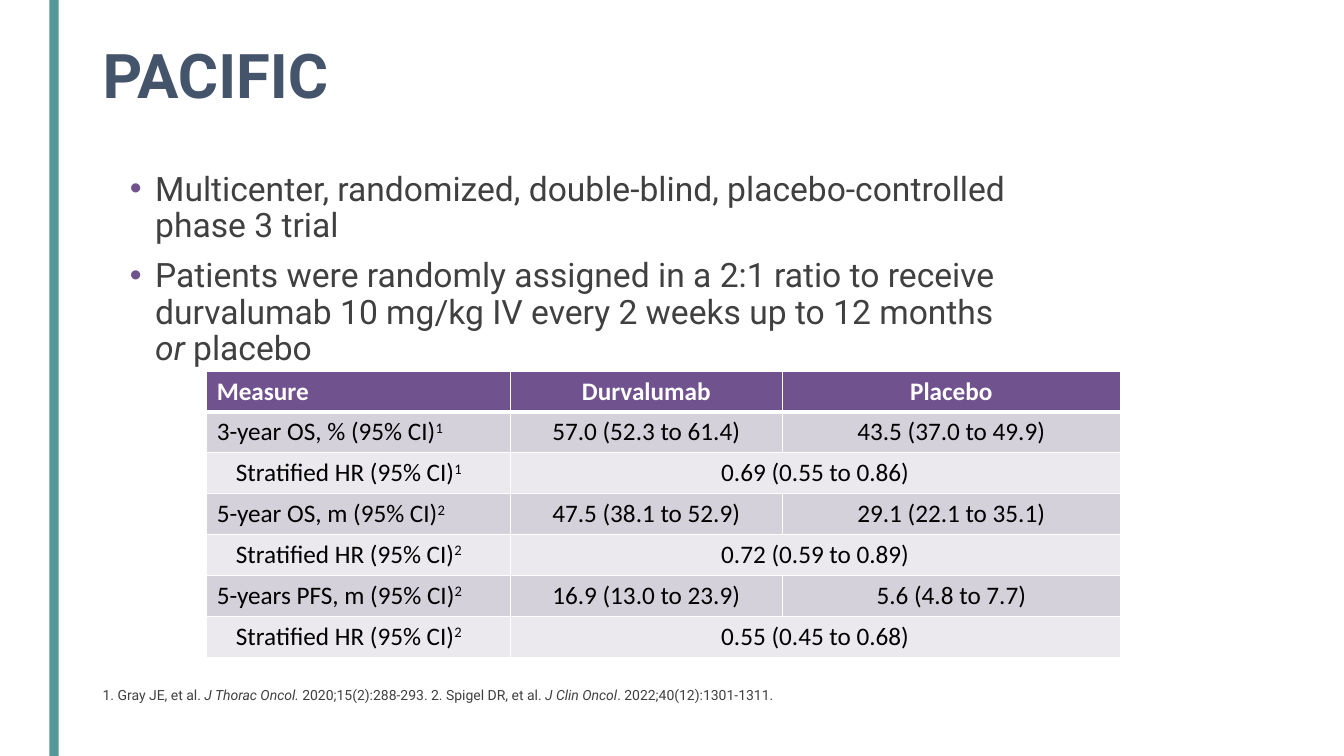
"""Build the PACIFIC trial slide with its outcome table."""
from dataclasses import dataclass
from typing import Any

import lxml.etree
import pptx
import pptx.dml.color
import pptx.enum.shapes
import pptx.enum.text
import pptx.oxml.ns
import pptx.util

ALIGN = pptx.enum.text.PP_ALIGN
WIDE = pptx.util.Inches(13.33)
HIGH = pptx.util.Inches(7.5)


@dataclass(frozen=True)
class Theme:
    head: str = "Roboto"
    cell: str = "Calibri"
    teal: str = "549897"
    slate: str = "44546A"
    gray: str = "404040"
    plum: str = "70528F"
    dark: str = "D5D1DB"
    light: str = "EBE9EE"
    white: str = "FFFFFF"
    black: str = "000000"
    title: int = 44
    body: int = 24
    grid: int = 18
    note: int = 10


@dataclass(frozen=True)
class Box:
    """Left, top, width and height in percent of the slide."""
    left: float
    top: float
    width: float
    height: float

    def place(self) -> tuple[int, int, int, int]:
        return (across(self.left), down(self.top),
                across(self.width), down(self.height))


@dataclass(frozen=True)
class Style:
    font: str
    size: int
    color: str
    bold: bool = False


@dataclass(frozen=True)
class Run:
    text: str
    italic: bool = False
    raised: bool = False


@dataclass(frozen=True)
class Row:
    label: str
    values: tuple[str, ...]
    cite: str = ""


THEME = Theme()
BAR = Box(3.68, 0, 0.68, 100)
TITLE = Box(6.9, 5.33, 86.27, 19.33)
NOTE = Box(6.9, 90.13, 75.54, 8)
BODY = Box(8.93, 22.13, 67.97, 55.87)
TABLE = Box(15.38, 49.07, 67.97, 37.87)
COLS = (22.58, 20.26, 25.13)

ROWS = (
    Row("Measure", ("Durvalumab", "Placebo")),
    Row("3-year OS, % (95% CI)",
        ("57.0 (52.3 to 61.4)", "43.5 (37.0 to 49.9)"), "1"),
    Row("Stratified HR (95% CI)", ("0.69 (0.55 to 0.86)",), "1"),
    Row("5-year OS, m (95% CI)",
        ("47.5 (38.1 to 52.9)", "29.1 (22.1 to 35.1)"), "2"),
    Row("Stratified HR (95% CI)", ("0.72 (0.59 to 0.89)",), "2"),
    Row("5-years PFS, m (95% CI)",
        ("16.9 (13.0 to 23.9)", "5.6 (4.8 to 7.7)"), "2"),
    Row("Stratified HR (95% CI)", ("0.55 (0.45 to 0.68)",), "2"),
)
POINTS = (
    (Run("Multicenter, randomized, double-blind, "
         "placebo-controlled phase 3 trial"),),
    (Run("Patients were randomly assigned in a 2:1 ratio to receive "
         "durvalumab 10 mg/kg IV every 2 weeks up to 12 months "),
     Run("or", italic=True), Run(" placebo")),
)
CITES = (
    Run("1. Gray JE, et al. "), Run("J Thorac Oncol. ", italic=True),
    Run("2020;15(2):288-293. 2. Spigel DR, et al. "),
    Run("J Clin Oncol", italic=True), Run(". 2022;40(12):1301-1311."),
)


def across(share: float) -> int:
    return round(WIDE * share / 100)


def down(share: float) -> int:
    return round(HIGH * share / 100)


def tint(code: str) -> pptx.dml.color.RGBColor:
    return pptx.dml.color.RGBColor.from_string(code)


def child(node: Any, tag: str, **attrs: str) -> Any:
    return lxml.etree.SubElement(node, pptx.oxml.ns.qn(tag), attrs)


def write(para: Any, runs: tuple[Run, ...], style: Style) -> None:
    for item in runs:
        run = para.add_run()
        run.text = item.text
        font = run.font
        font.name, font.size = style.font, pptx.util.Pt(style.size)
        font.bold, font.italic = style.bold, item.italic
        font.color.rgb = tint(style.color)
        if item.raised:
            run._r.get_or_add_rPr().set("baseline", "30000")


def add_text(slide: Any, box: Box) -> Any:
    frame = slide.shapes.add_textbox(*box.place()).text_frame
    frame.word_wrap = True
    return frame


def add_bar(slide: Any) -> None:
    bar = slide.shapes.add_shape(
        pptx.enum.shapes.MSO_SHAPE.RECTANGLE, *BAR.place())
    bar.shadow.inherit = False
    bar.fill.solid()
    bar.fill.fore_color.rgb = tint(THEME.teal)
    bar.line.fill.background()


def add_points(slide: Any) -> None:
    frame = add_text(slide, BODY)
    style = Style(THEME.head, THEME.body, THEME.gray)
    hang = pptx.util.Inches(0.25)
    for index, runs in enumerate(POINTS):
        para = frame.add_paragraph() if index else frame.paragraphs[0]
        props = para._p.get_or_add_pPr()
        props.set("marL", str(hang))
        props.set("indent", str(-hang))
        child(child(props, "a:buClr"), "a:srgbClr", val=THEME.plum)
        child(props, "a:buFont", typeface="Arial")
        child(props, "a:buChar", char="•")
        para.line_spacing = 0.9
        if index:
            para.space_before = pptx.util.Pt(10)
        write(para, runs, style)


def paint(cell: Any, row: int, fill: str) -> None:
    props = cell._tc.get_or_add_tcPr()
    for side in "LRTB":
        thick = (row, side) in ((0, "B"), (1, "T"))
        width = pptx.util.Pt(3 if thick else 1)
        edge = child(props, f"a:ln{side}", w=str(width))
        child(child(edge, "a:solidFill"), "a:srgbClr", val=THEME.white)
    cell.fill.solid()
    cell.fill.fore_color.rgb = tint(fill)


def add_grid(slide: Any) -> None:
    table = slide.shapes.add_table(
        len(ROWS), len(COLS), *TABLE.place()).table
    for col, share in zip(table.columns, COLS):
        col.width = across(share)
    for index, row in enumerate(ROWS):
        table.rows[index].height = down(TABLE.height / len(ROWS))
        top, pooled = index == 0, len(row.values) == 1
        style = Style(THEME.cell, THEME.grid,
                      THEME.white if top else THEME.black, top)
        fill = THEME.plum if top else THEME.light if pooled else THEME.dark
        cells = [table.cell(index, col) for col in range(len(COLS))]
        for cell in cells:
            paint(cell, index, fill)
        para = cells[0].text_frame.paragraphs[0]
        if pooled:
            cells[1].merge(cells[2])
            inset = pptx.util.Inches(0.19)
            para._p.get_or_add_pPr().set("indent", str(inset))
        cite = (Run(row.cite, raised=True),) if row.cite else ()
        write(para, (Run(row.label), *cite), style)
        for cell, value in zip(cells[1:], row.values):
            para = cell.text_frame.paragraphs[0]
            para.alignment = ALIGN.CENTER
            write(para, (Run(value),), style)


def main() -> None:
    deck = pptx.Presentation()
    deck.slide_width, deck.slide_height = WIDE, HIGH
    slide = deck.slides.add_slide(deck.slide_layouts[6])
    add_bar(slide)
    para = add_text(slide, TITLE).paragraphs[0]
    para.line_spacing = 0.9
    write(para, (Run("PACIFIC"),),
          Style(THEME.head, THEME.title, THEME.slate, True))
    write(add_text(slide, NOTE).paragraphs[0], CITES,
          Style(THEME.head, THEME.note, THEME.gray))
    add_grid(slide)
    add_points(slide)
    deck.save("out.pptx")


if __name__ == "__main__":
    main()
